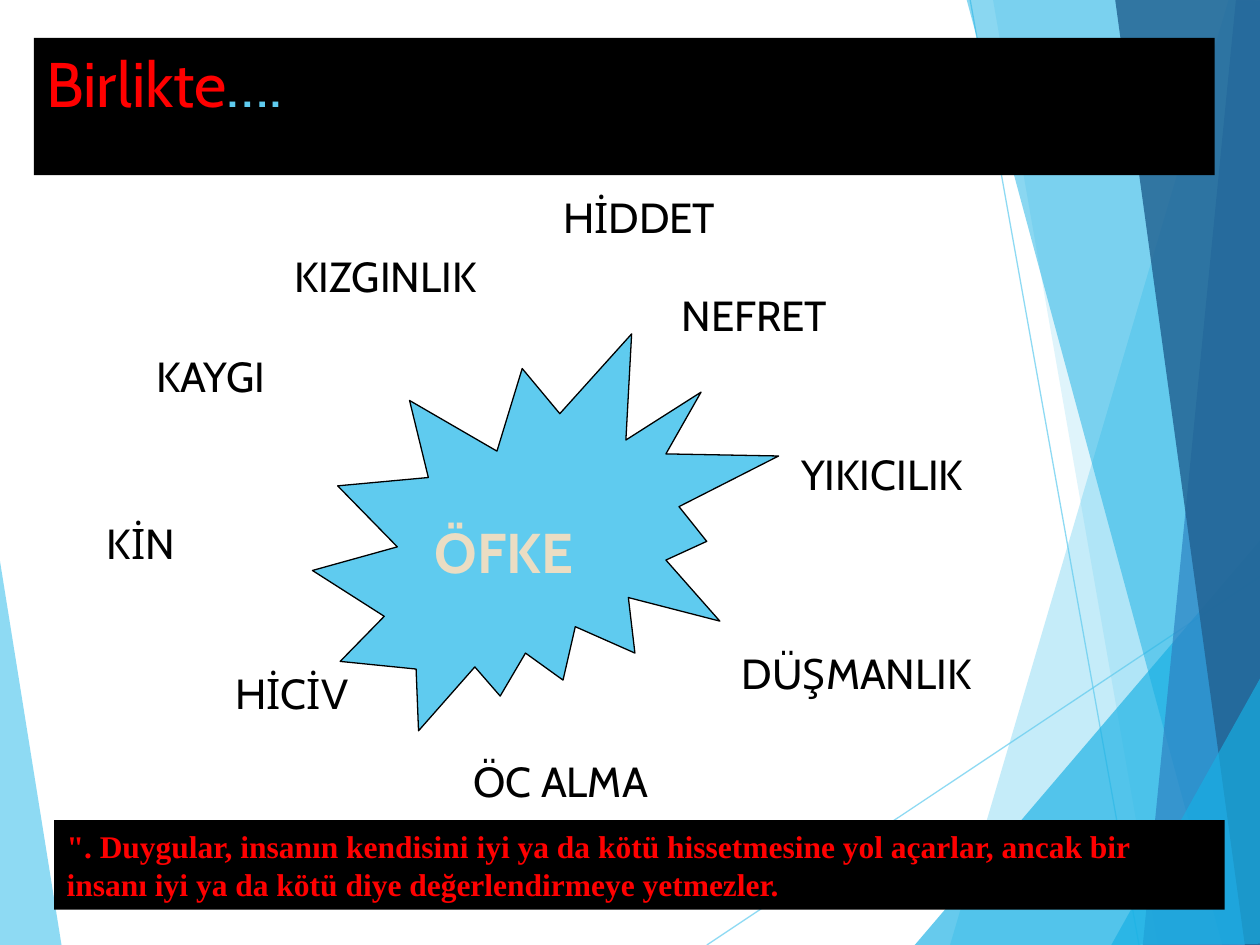
"""Build the slide of feelings that surround anger."""
import pptx
import pptx.dml.color
import pptx.enum.shapes
import pptx.enum.text
import pptx.oxml
import pptx.oxml.ns
import pptx.util

Inches = pptx.util.Inches
Shapes = pptx.enum.shapes.MSO_SHAPE
Anchor = pptx.enum.text.MSO_ANCHOR

SKY, CYAN, RED, BLACK = "5FCBEF", "17B0E4", "FF0000", "000000"

LEFT_FACET = (SKY, 70, [(-0.01, 4.39), (0.49, 7.51), (-0.01, 7.5)])
RAYS = [((5.61, 7.5), (10.01, 4.57)), ((7.7, 0), (9.04, 7.5))]
RIGHT_FACETS = [
    (SKY, 36, [(9.75, 0), (7.54, 7.5), (10.02, 7.51), (10.01, 0.01)]),
    (SKY, 20, [(7.88, -0.01), (9.19, 7.5), (10.01, 7.5), (10.01, -0.01)]),
    (CYAN, 66, [(7.26, 7.5), (10, 4.29), (10.01, 7.5)]),
    (CYAN, 50, [(7.67, -0.01), (9.7, 7.5), (10.01, 7.49), (10.01, -0.01)]),
    ("2E83C3", 70, [(9.81, -0.01), (9.07, 7.5), (10.01, 7.5), (10, -0.01)]),
    ("226292", 82, [(8.85, -0.01), (9.88, 7.5), (10.02, 7.5), (10, -0.01)]),
    (CYAN, 66, [(8.82, 7.5), (10.02, 5.35), (10.02, 7.49)]),
]

TITLE = [("Birlikte", RED), ("….", SKY)]
CENTRE = "ÖFKE"
FEELINGS = [
    ("KIZGINLIK", 2.24, 1.94),
    ("KAYGI", 1.14, 2.73),
    ("KİN", 0.75, 4.06),
    ("NEFRET", 5.31, 2.25),
    ("DÜŞMANLIK", 5.79, 5.09),
    ("YIKICILIK", 6.26, 3.51),
    ("HİCİV", 1.77, 5.25),
    ("ÖC ALMA", 3.66, 5.95),
    ("HİDDET", 4.37, 1.47),
]
QUOTE = (
    '". Duygular, insanın kendisini iyi ya da kötü hissetmesine yol açarlar, '
    "ancak bir insanı iyi ya da kötü diye değerlendirmeye yetmezler."
)


def rgb(code):
    return pptx.dml.color.RGBColor.from_string(code)


def set_opacity(shape, percent):
    for colour in shape.element.spPr.iter(pptx.oxml.ns.qn("a:srgbClr")):
        alpha = pptx.oxml.parse_xml(f'<a:alpha {pptx.oxml.ns.nsdecls("a")}/>')
        alpha.set("val", str(percent * 1000))
        colour.append(alpha)


def paint(shape, colour, outline=None):
    shape.shadow.inherit = False
    shape.fill.solid()
    shape.fill.fore_color.rgb = rgb(colour)
    if outline:
        shape.line.color.rgb = rgb(outline)
        shape.line.width = pptx.util.Pt(0.75)
    else:
        shape.line.fill.background()


def add_facet(slide, colour, opacity, points):
    corners = [(Inches(x), Inches(y)) for x, y in points]
    builder = slide.shapes.build_freeform(*corners[0], scale=1.0)
    builder.add_line_segments(corners[1:], close=True)
    facet = builder.convert_to_shape()
    paint(facet, colour)
    set_opacity(facet, opacity)


def add_ray(slide, start, end):
    ray = slide.shapes.add_connector(
        pptx.enum.shapes.MSO_CONNECTOR.STRAIGHT, *map(Inches, start + end))
    ray.line.color.rgb = rgb(SKY)
    ray.line.width = pptx.util.Pt(0.75)
    set_opacity(ray, 70)
    ray.element.spPr.append(
        pptx.oxml.parse_xml(f'<a:effectLst {pptx.oxml.ns.nsdecls("a")}/>'))


def add_preset(slide, kind, place, colour, outline=None):
    shape = slide.shapes.add_shape(kind, *map(Inches, place))
    paint(shape, colour, outline)
    return shape


def write(box, runs, size, font="Cabin", bold=False, anchor=Anchor.TOP):
    frame = box.text_frame
    frame.word_wrap = True
    frame.vertical_anchor = anchor
    para = frame.paragraphs[0]
    para.alignment = pptx.enum.text.PP_ALIGN.LEFT
    for text, colour in runs:
        span = para.add_run()
        span.text = text
        span.font.name = font
        span.font.size = pptx.util.Pt(size)
        span.font.bold = bold
        span.font.color.rgb = rgb(colour)


def add_label(slide, text, place, size, colour=BLACK, bold=False):
    box = slide.shapes.add_textbox(*map(Inches, place))
    write(box, [(text, colour)], size, bold=bold)


def main():
    deck = pptx.Presentation()
    deck.slide_width, deck.slide_height = Inches(10), Inches(7.5)
    slide = deck.slides.add_slide(deck.slide_layouts[6])

    add_facet(slide, *LEFT_FACET)
    for start, end in RAYS:
        add_ray(slide, start, end)
    for facet in RIGHT_FACETS:
        add_facet(slide, *facet)

    add_preset(slide, Shapes.EXPLOSION2, (2.48, 2.65, 3.7, 3.15), SKY, BLACK)
    title = add_preset(slide, Shapes.RECTANGLE, (0.27, 0.3, 9.37, 1.09), BLACK)
    write(title, TITLE, 36)
    for text, left, top in FEELINGS:
        add_label(slide, text, (left, top, 3.15, 0.5), 24)
    add_label(slide, CENTRE, (3.35, 4.06, 2.05, 0.64), 32, "EBDDC3", True)
    quote = add_preset(slide, Shapes.RECTANGLE, (0.43, 6.51, 9.29, 0.71), BLACK)
    write(quote, [(QUOTE, RED)], 18, "Times New Roman", True, Anchor.MIDDLE)

    deck.save("out.pptx")


if __name__ == "__main__":
    main()
